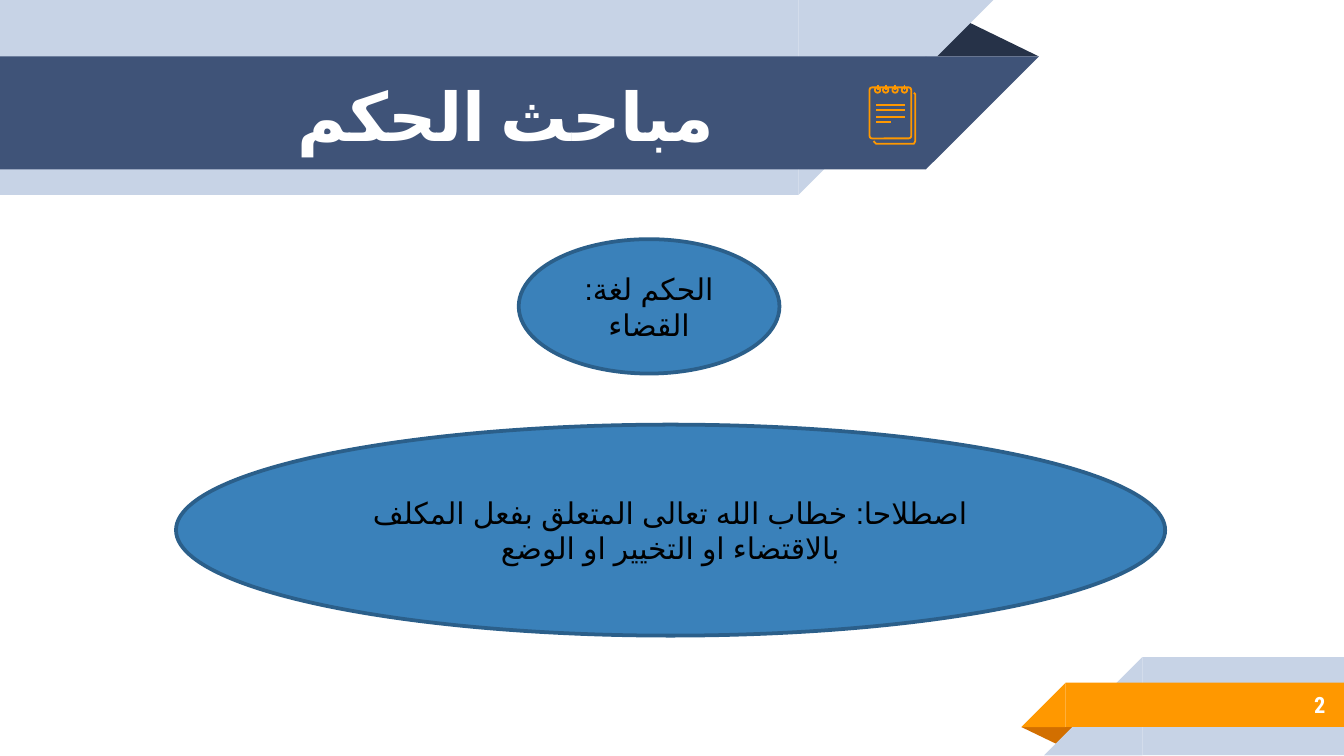
from dataclasses import dataclass

from pptx import Presentation
from pptx.dml.color import RGBColor
from pptx.enum.lang import MSO_LANGUAGE_ID
from pptx.enum.shapes import MSO_CONNECTOR, MSO_SHAPE
from pptx.enum.text import MSO_ANCHOR, PP_ALIGN
from pptx.oxml.ns import qn
from pptx.util import Inches, Pt
from lxml.etree import SubElement


@dataclass(frozen=True)
class Theme:
    pale: str = "C7D3E6"
    navy: str = "3F5378"
    navy_fold: str = "263248"
    orange: str = "FF9800"
    orange_fold: str = "D26F00"
    blue: str = "3A81BA"
    blue_edge: str = "2B5F8A"
    white: str = "FFFFFF"
    black: str = "000000"
    title_size: int = 36
    body_size: int = 16
    number_size: int = 12
    heading_font: str = "Roboto Condensed"
    body_font: str = "Arial"


theme = Theme()
deck = Presentation()
deck.slide_width = Inches(10)
deck.slide_height = Inches(10 * 9 / 16)
page = deck.slides.add_slide(deck.slide_layouts[6])


def add_shape(kind, bounds, fill=None, line=None, width=0.96, rotation=0, flip=False):
    shape = page.shapes.add_shape(kind, *[Inches(value) for value in bounds])
    shape.shadow.inherit = False
    shape.rotation = rotation
    if flip:
        shape.element.spPr.get_or_add_xfrm().set("flipH", "1")
    if fill:
        shape.fill.solid()
        shape.fill.fore_color.rgb = RGBColor.from_string(fill)
    else:
        shape.fill.background()
    if line:
        shape.line.color.rgb = RGBColor.from_string(line)
        shape.line.width = Pt(width)
    else:
        shape.line.fill.background()
    return shape


def write_text(box, text, size, font, color, bold=False, align=PP_ALIGN.CENTER, inset=0.05, rtl=True):
    frame = box.text_frame
    frame.word_wrap = True
    frame.vertical_anchor = MSO_ANCHOR.MIDDLE
    frame.margin_left = frame.margin_right = Inches(0.1)
    frame.margin_top = frame.margin_bottom = Inches(inset)
    para = frame.paragraphs[0]
    para.alignment = align
    span = para.add_run()
    span.text = text
    span.font.size = Pt(size)
    span.font.name = font
    span.font.bold = bold
    span.font.color.rgb = RGBColor.from_string(color)
    if rtl:
        span.font.language_id = MSO_LANGUAGE_ID.ARABIC
        para._p.get_or_add_pPr().set("rtl", "1")
        SubElement(span.font._element, qn("a:cs"), typeface=font)


fold = add_shape(MSO_SHAPE.ISOSCELES_TRIANGLE, (6.88, 0.14, 0.85, 0.28), theme.navy_fold)
fold.adjustments[0] = 0.324
for top, length, height, color in [(0, 5.94, 1.45, theme.pale), (0.42, 6.89, 0.84, theme.navy)]:
    add_shape(MSO_SHAPE.RECTANGLE, (0, top, length, height), color, rotation=180, flip=True)
    add_shape(MSO_SHAPE.RIGHT_TRIANGLE, (length, top, height, height), color, rotation=180, flip=True)

fold = add_shape(MSO_SHAPE.ISOSCELES_TRIANGLE, (7.6, 5.41, 0.43, 0.14), theme.orange_fold, rotation=180)
fold.adjustments[0] = 0.324
for left, top, height, color in [(8.5, 4.89, 0.73, theme.pale), (7.93, 5.08, 0.33, theme.orange)]:
    add_shape(MSO_SHAPE.RECTANGLE, (left, top, 10 - left, height), color, flip=True)
    add_shape(MSO_SHAPE.RIGHT_TRIANGLE, (left - height, top, height, height), color, flip=True)

number = page.shapes.add_textbox(Inches(8.33), Inches(5.07), Inches(1.63), Inches(0.35))
write_text(number, "2", theme.number_size, theme.heading_font, theme.white,
           bold=True, align=PP_ALIGN.RIGHT, inset=0.1, rtl=False)

builder = page.shapes.build_freeform(Inches(6.5), Inches(1.05), scale=1)
back_edge = [(6.52, 1.07), (6.8, 1.07), (6.81, 1.05), (6.81, 0.7), (6.8, 0.69)]
builder.add_line_segments([(Inches(x), Inches(y)) for x, y in back_edge], close=False)
back_sheet = builder.convert_to_shape()
back_sheet.shadow.inherit = False
back_sheet.fill.background()
back_sheet.line.color.rgb = RGBColor.from_string(theme.orange)
back_sheet.line.width = Pt(0.96)

front_sheet = add_shape(MSO_SHAPE.ROUNDED_RECTANGLE, (6.47, 0.65, 0.31, 0.38), line=theme.orange)
front_sheet.adjustments[0] = 0.06

strokes = [(6.52, 0.78, 6.73, 0.78), (6.52, 0.82, 6.73, 0.82),
           (6.52, 0.87, 6.73, 0.87), (6.52, 0.91, 6.63, 0.91)]
for center in (6.53, 6.59, 6.66, 6.73):
    add_shape(MSO_SHAPE.OVAL, (center - 0.02, 0.65, 0.04, 0.04), line=theme.orange)
    strokes.append((center, 0.63, center, 0.67))
for stroke in strokes:
    connector = page.shapes.add_connector(MSO_CONNECTOR.STRAIGHT, *[Inches(value) for value in stroke])
    connector.line.color.rgb = RGBColor.from_string(theme.orange)
    connector.line.width = Pt(0.96)
    SubElement(connector.element.spPr, qn("a:effectLst"))

title = page.shapes.add_textbox(Inches(0.89), Inches(0.43), Inches(5.75), Inches(0.84))
write_text(title, "مباحث الحكم", theme.title_size, theme.heading_font, theme.white, bold=True, inset=0.1)

definitions = [
    ((3.86, 1.78, 1.94, 1), "الحكم لغة: القضاء"),
    ((1.31, 3.16, 7.36, 1.57), "اصطلاحا: خطاب الله تعالى المتعلق بفعل المكلف بالاقتضاء او التخيير او الوضع"),
]
for bounds, text in definitions:
    ellipse = add_shape(MSO_SHAPE.OVAL, bounds, theme.blue, theme.blue_edge, width=2)
    write_text(ellipse, text, theme.body_size, theme.body_font, theme.black)

deck.save("out.pptx")
